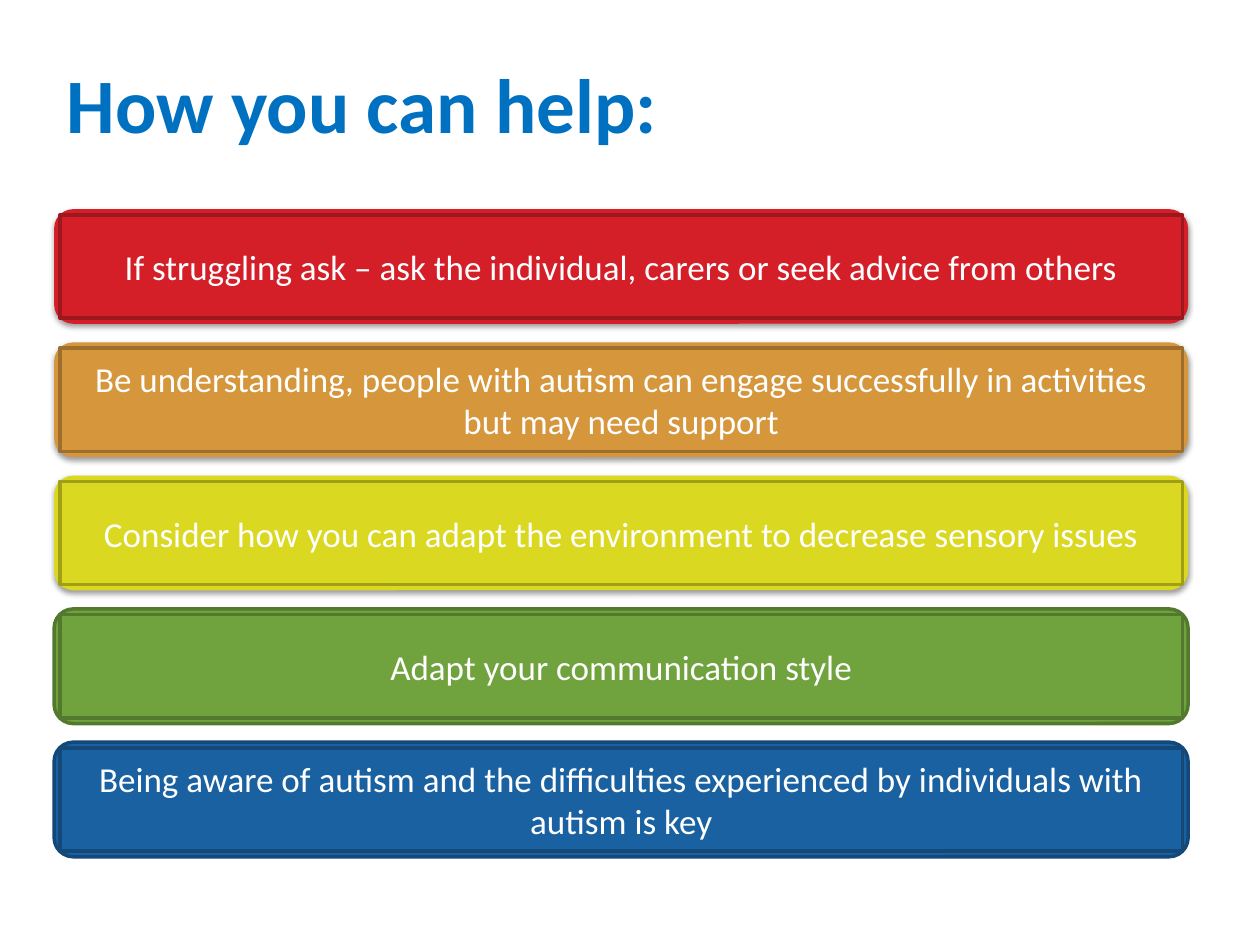
from dataclasses import dataclass

from lxml.etree import SubElement
from pptx import Presentation
from pptx.dml.color import RGBColor
from pptx.enum.shapes import MSO_SHAPE
from pptx.enum.text import MSO_ANCHOR, PP_ALIGN
from pptx.oxml.ns import qn
from pptx.util import Inches, Pt


@dataclass(frozen=True)
class Theme:
    font: str = "Calibri"
    title_color: str = "0070C0"
    tip_color: str = "FFFFFF"
    shadow_color: str = "000000"
    title_size: int = 44
    tip_size: int = 20
    border_width: int = 2


THEME = Theme()
LEFT, WIDTH = 0.43, 9
FIRST_TOP, LAST_TOP, BAR_HEIGHT = 1.66, 5.89, 0.91
INSET = 0.045

TIPS = [
    ("If struggling ask – ask the individual, carers or seek advice from others",
     "D41F29", "9C171E", True),
    ("Be understanding, people with autism can engage successfully in activities "
     "but may need support", "D5963C", "9E6E2C", True),
    ("Consider how you can adapt the environment to decrease sensory issues",
     "DAD821", "A19F18", True),
    ("Adapt your communication style", "70A33E", "53792E", False),
    ("Being aware of autism and the difficulties experienced by individuals "
     "with autism is key", "1A61A2", "134878", False),
]


def apply(target, values):
    for key, value in values.items():
        setattr(target, key, value)


def write(frame, text, size, color, bold, align, frame_format):
    apply(frame, {"word_wrap": True, **frame_format})
    paragraph = frame.paragraphs[0]
    paragraph.alignment = align
    run = paragraph.add_run()
    run.text = text
    apply(run.font, {"name": THEME.font, "size": Pt(size), "bold": bold})
    run.font.color.rgb = RGBColor.from_string(color)


def add_title(slide, text):
    title = slide.shapes.title
    apply(title, {"left": Inches(LEFT), "top": Inches(0.36),
                  "width": Inches(WIDTH), "height": Inches(1.25)})
    write(title.text_frame, text, THEME.title_size, THEME.title_color, True,
          PP_ALIGN.LEFT,
          {"vertical_anchor": MSO_ANCHOR.TOP, "margin_top": Inches(0.09)})


def add_panel(group, preset, inset, top, fill, border):
    panel = group.shapes.add_shape(
        preset, Inches(LEFT + inset), Inches(top + inset),
        Inches(WIDTH - 2 * inset), Inches(BAR_HEIGHT - 2 * inset))
    panel.shadow.inherit = False
    panel.fill.solid()
    panel.fill.fore_color.rgb = RGBColor.from_string(fill)
    if border:
        panel.line.color.rgb = RGBColor.from_string(border)
        panel.line.width = Pt(THEME.border_width)
    else:
        panel.line.fill.background()
    return panel


def add_shadow(panel):
    effects = panel._element.spPr.find(qn("a:effectLst"))
    shadow = SubElement(effects, qn("a:outerShdw"), blurRad=str(Pt(3.1)),
                        dist=str(Pt(1.6)), dir="5400000", rotWithShape="0")
    color = SubElement(shadow, qn("a:srgbClr"), val=THEME.shadow_color)
    SubElement(color, qn("a:alpha"), val="38000")


def add_tip(slide, top, text, fill, border, raised):
    group = slide.shapes.add_group_shape()
    bar = add_panel(group, MSO_SHAPE.ROUNDED_RECTANGLE, 0, top, fill,
                    None if raised else border)
    if raised:
        add_shadow(bar)
    label = add_panel(group, MSO_SHAPE.RECTANGLE, INSET, top, fill, border)
    margins = {f"margin_{side}": Inches(0.09)
               for side in ("left", "top", "right", "bottom")}
    write(label.text_frame, text, THEME.tip_size, THEME.tip_color, False,
          PP_ALIGN.CENTER, {"vertical_anchor": MSO_ANCHOR.MIDDLE, **margins})


def main():
    presentation = Presentation()
    apply(presentation, {"slide_width": Inches(10), "slide_height": Inches(7.5)})
    slide = presentation.slides.add_slide(presentation.slide_layouts[5])
    add_title(slide, "How you can help:")
    pitch = (LAST_TOP - FIRST_TOP) / (len(TIPS) - 1)
    for row, tip in enumerate(TIPS):
        add_tip(slide, FIRST_TOP + row * pitch, *tip)
    presentation.save("out.pptx")


if __name__ == "__main__":
    main()
